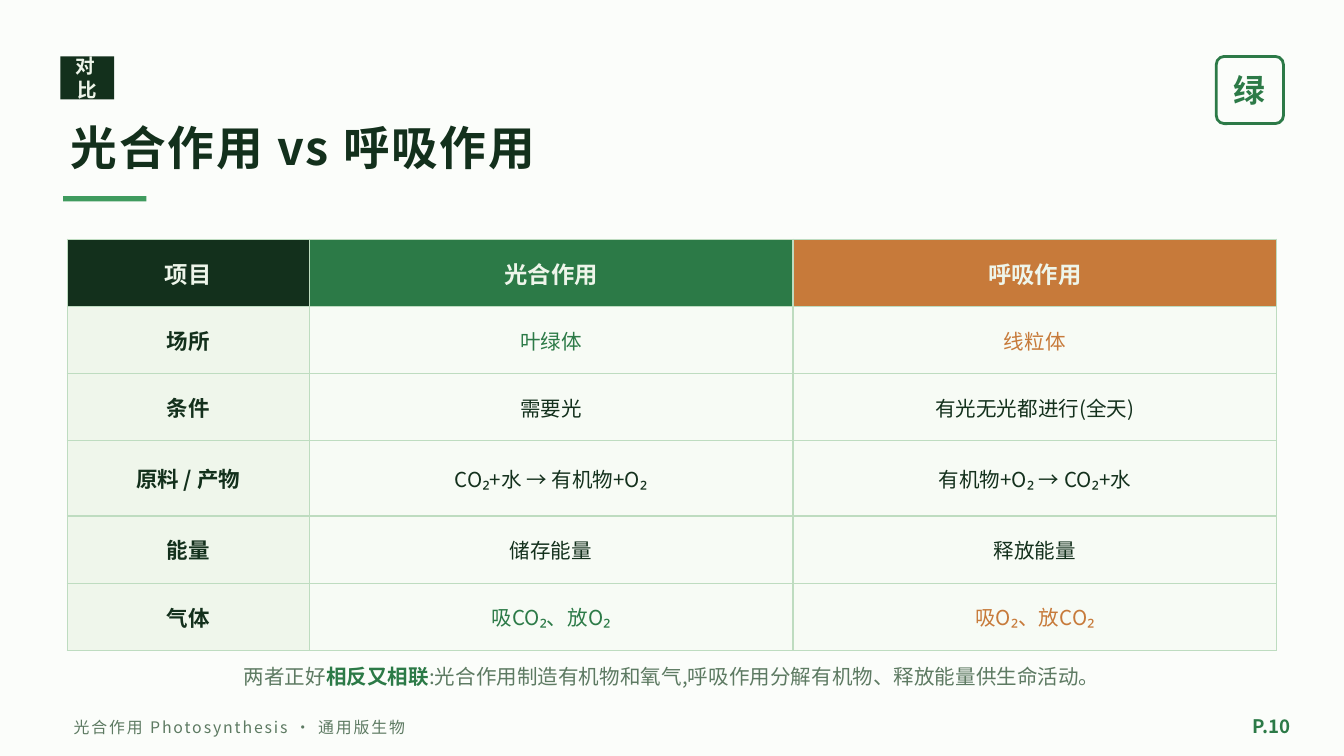
from lxml import etree
from pptx import Presentation, util as u
from pptx.dml.color import RGBColor
from pptx.enum import shapes, text
from pptx.oxml.ns import qn

PX = 9144  # 100 px to the inch
FONT = "Noto Sans CJK SC"
DARK, GREEN, LEAF, ORANGE = "13301C", "2C7A47", "3F9B5E", "C77A3A"
PALE, MUTED, BORDER = "EEF5EA", "5D7A62", "BEDCC0"
LABEL_FILL, BODY_FILL, PAPER = "EFF6EB", "F7FBF5", "FBFDFA"
LEFT, CENTER, RIGHT = text.PP_ALIGN.LEFT, text.PP_ALIGN.CENTER, text.PP_ALIGN.RIGHT

# Box, alignment, runs of (wording, size, colour, bold, letter spacing)
TEXTS = [
    ((45, 41, 40, 34), CENTER, [("对比", 10.5, PALE, True, 2)]),
    ((43, 78, 900, 62), LEFT, [("光合作用 vs 呼吸作用", 25, DARK, True, 1)]),
    ((905, 41, 50, 52), CENTER, [("绿", 17, GREEN, True, 0)]),
    ((50, 478, 900, 50), CENTER, [
        ("两者正好", 11, MUTED, False, 0),
        ("相反又相联", 11, GREEN, True, 0),
        (":光合作用制造有机物和氧气,呼吸作用分解有机物、释放能量供生命活动。",
         11, MUTED, False, 0)]),
    ((45, 526, 680, 30), LEFT,
     [("光合作用 Photosynthesis · 通用版生物", 8.5, MUTED, False, 1)]),
    ((910, 524, 60, 32), RIGHT, [("P.10", 10, GREEN, True, 0)]),
]

COMPARISON = [
    ("项目", "光合作用", "呼吸作用"),
    ("场所", "叶绿体", "线粒体"),
    ("条件", "需要光", "有光无光都进行(全天)"),
    ("原料 / 产物", "CO₂+水 → 有机物+O₂", "有机物+O₂ → CO₂+水"),
    ("能量", "储存能量", "释放能量"),
    ("气体", "吸CO₂、放O₂", "吸O₂、放CO₂"),
]
HEADER_FILLS = (DARK, GREEN, ORANGE)
COLORED_TOPICS = ("场所", "气体")
COLUMN_WIDTHS = (180, 360, 360)
ROW_HEIGHTS = (50, 50, 50, 56, 50, 50)


def rgb(color):
    return RGBColor.from_string(color)


def emu(box):
    return [length * PX for length in box]


def add_run(paragraph, wording, size, color, bold=False, spacing=0):
    run = paragraph.add_run()
    run.text = wording
    font = run.font
    font.size, font.bold, font.name = u.Pt(size), bold, FONT
    font.color.rgb = rgb(color)
    properties = run._r.get_or_add_rPr()
    etree.SubElement(properties, qn("a:ea"), typeface=FONT)
    if spacing:
        properties.set("spc", str(spacing * 100))


def add_text(slide, box, align, runs):
    frame = slide.shapes.add_textbox(*emu(box)).text_frame
    frame.word_wrap = True
    frame.vertical_anchor = text.MSO_ANCHOR.MIDDLE
    paragraph = frame.paragraphs[0]
    paragraph.alignment = align
    for run in runs:
        add_run(paragraph, *run)


def add_block(slide, box, color):
    block = slide.shapes.add_shape(shapes.MSO_SHAPE.RECTANGLE, *emu(box))
    block.shadow.inherit = False
    block.fill.solid()
    block.fill.fore_color.rgb = rgb(color)
    block.line.fill.background()


def add_badge(slide, box):
    badge = slide.shapes.add_shape(shapes.MSO_SHAPE.ROUNDED_RECTANGLE, *emu(box))
    badge.adjustments[0] = 0.12
    badge.shadow.inherit = False
    badge.fill.background()
    badge.line.color.rgb = rgb(GREEN)
    badge.line.width = u.Pt(1.5)


def add_borders(cell):
    """Borders must come before the fill in the cell's properties."""
    properties = cell._tc.get_or_add_tcPr()
    for position, side in enumerate(("lnL", "lnR", "lnT", "lnB")):
        line = etree.Element(qn(f"a:{side}"), w=str(u.Pt(0.75)))
        fill = etree.SubElement(line, qn("a:solidFill"))
        etree.SubElement(fill, qn("a:srgbClr"), val=BORDER)
        properties.insert(position, line)


def cell_style(row, column):
    """Return fill, text size, text colour and bold."""
    if row == 0:
        return HEADER_FILLS[column], 12.5, PALE, True
    if column == 0:
        return LABEL_FILL, 11.5, DARK, True
    colored = COMPARISON[row][0] in COLORED_TOPICS
    return BODY_FILL, 11, HEADER_FILLS[column] if colored else DARK, False


def add_comparison(slide, left, top):
    box = (left, top, sum(COLUMN_WIDTHS), sum(ROW_HEIGHTS))
    table = slide.shapes.add_table(
        len(ROW_HEIGHTS), len(COLUMN_WIDTHS), *emu(box)).table
    table.horz_banding = False
    for column, width in zip(table.columns, COLUMN_WIDTHS):
        column.width = width * PX
    for row, height in zip(table.rows, ROW_HEIGHTS):
        row.height = height * PX
    for r, wordings in enumerate(COMPARISON):
        for c, wording in enumerate(wordings):
            cell = table.cell(r, c)
            fill, size, color, bold = cell_style(r, c)
            cell.fill.solid()
            cell.fill.fore_color.rgb = rgb(fill)
            cell.vertical_anchor = text.MSO_ANCHOR.MIDDLE
            add_borders(cell)
            paragraph = cell.text_frame.paragraphs[0]
            paragraph.alignment = CENTER
            add_run(paragraph, wording, size, color, bold)


def main():
    deck = Presentation()
    deck.slide_width = 1000 * PX
    deck.slide_height = deck.slide_width * 9 // 16
    slide = deck.slides.add_slide(deck.slide_layouts[6])
    slide.background.fill.solid()
    slide.background.fill.fore_color.rgb = rgb(PAPER)
    add_block(slide, (45, 42, 40, 32), DARK)
    add_block(slide, (47, 146, 62, 4), LEAF)
    add_badge(slide, (905, 42, 50, 50))
    add_comparison(slide, 50, 178)
    for box, align, runs in TEXTS:
        add_text(slide, box, align, runs)
    deck.save("out.pptx")


if __name__ == "__main__":
    main()
